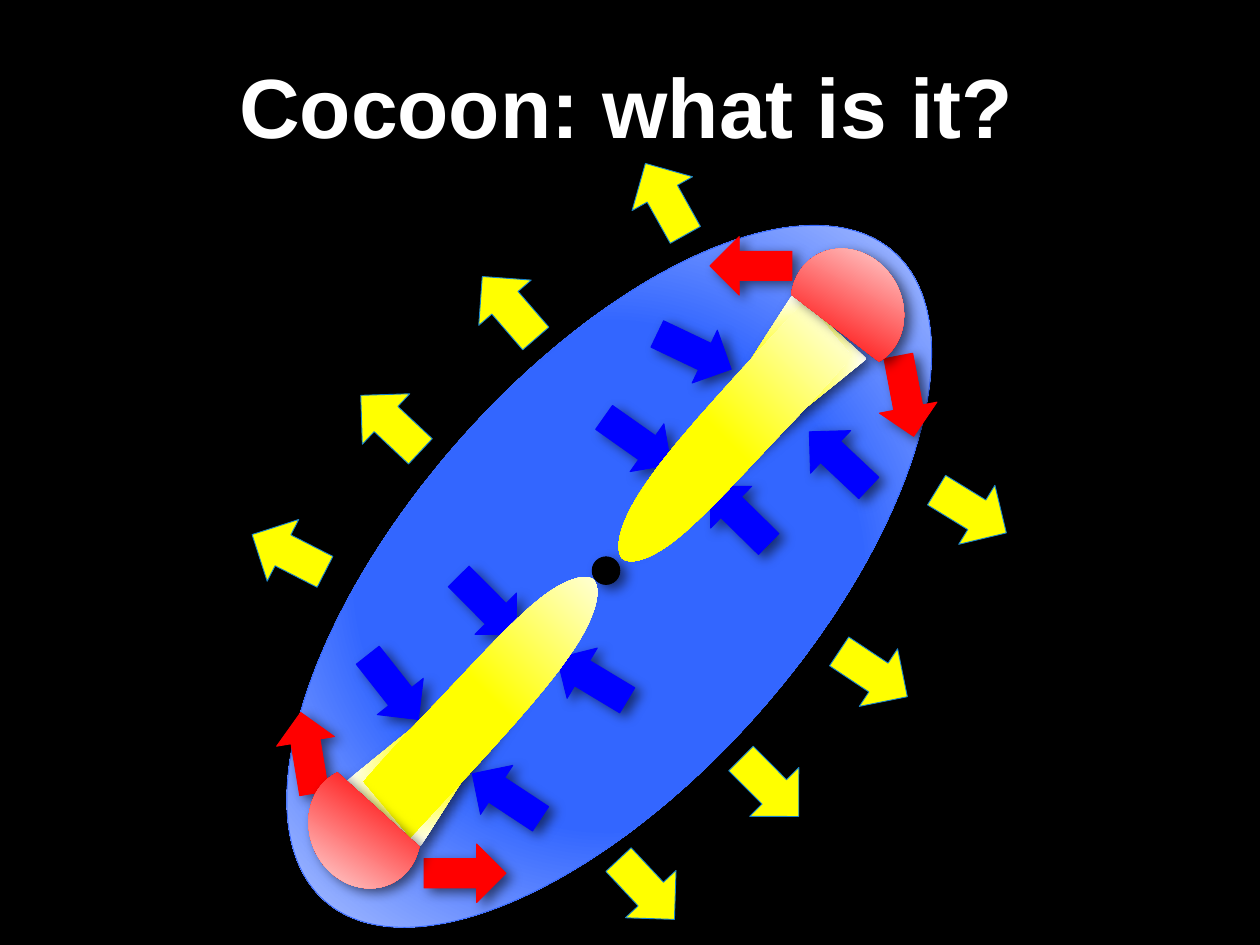
from lxml import etree
from pptx import Presentation
from pptx.dml.color import RGBColor
from pptx.enum import shapes, text
from pptx.oxml.ns import nsdecls
from pptx.util import Pt

NS = nsdecls("a")
KIND = shapes.MSO_SHAPE


def hue(code):
    return RGBColor.from_string(code)


def paint(shape, turn, fill, edge=None, shade=True):
    shape.rotation = turn
    shape.shadow.inherit = False
    props = shape._element.spPr
    if isinstance(fill, str):
        shape.fill.solid()
        shape.fill.fore_color.rgb = hue(fill)
    else:
        stops, way = fill
        marks = "".join(f'<a:gs pos="{pos * 1000}"><a:srgbClr val="{hue(code)}"/></a:gs>'
                        for pos, code in stops)
        shape.fill.background()
        props.replace(props.find("{*}noFill"), etree.fromstring(
            f'<a:gradFill {NS} rotWithShape="1"><a:gsLst>{marks}</a:gsLst>{way}</a:gradFill>'))
    if edge:
        shape.line.color.rgb = hue(edge)
        shape.line.width = Pt(0.5)
    else:
        shape.line.fill.background()
    if shade:
        props.find("{*}effectLst").append(etree.fromstring(
            f'<a:outerShdw {NS} blurRad="{Pt(7)}" dist="{Pt(4)}" dir="{35 * 60000}" '
            f'algn="ctr" rotWithShape="0"><a:srgbClr val="{hue("000000")}">'
            '<a:alpha val="55000"/></a:srgbClr></a:outerShdw>'))


deck = Presentation()
deck.slide_width, deck.slide_height = Pt(720), Pt(540)
slide = deck.slides.add_slide(deck.slide_layouts[5])
slide.background.fill.solid()
slide.background.fill.fore_color.rgb = hue("000000")
tree = slide.shapes

title = tree.title
title.left, title.top, title.width, title.height = Pt(70), Pt(14.4), Pt(576), Pt(90.7)
frame = title.text_frame
frame.text = "Cocoon: what is it?"
frame.vertical_anchor = text.MSO_ANCHOR.MIDDLE
frame.paragraphs[0].alignment = text.PP_ALIGN.CENTER
font = frame.paragraphs[0].runs[0].font
font.name, font.size, font.bold = "Arial", Pt(48), True
font.color.rgb = hue("FFFFFF")

mid = '<a:path path="{}"><a:fillToRect l="50000" t="50000" r="50000" b="50000"/></a:path>'
low = '<a:path path="circle"><a:fillToRect t="100000" r="100000"/></a:path>'
slant = f'<a:lin ang="{149 * 60000}" scaled="0"/>'
glow = ([(40, "3366FF"), (99, "FFFFFF"), (100, "FFFFFF")], mid.format("circle"))
flare = ([(48, "FFFF00"), (100, "FFFFFF")], mid.format("shape"))
beam = ([(50, "FFFF00"), (100, "FFFFFF")], low)
heat = ([(21, "FF0000"), (100, "FFFFFF")], slant)

cocoon = (KIND.OVAL, 101.5, 213.8, 493.2, 231.1, 131.2, glow, "3366FF")
core = (KIND.OVAL, 338.4, 318.2, 15.8, 15.8, 0, "000000", "000000")
cones = [(KIND.ISOSCELES_TRIANGLE, x, y, 56.2, 172.1, turn, flare, None)
         for x, y, turn in [(388.8, 164.2, 221.9), (248.4, 314.6, 41.7)]]
caps = [(KIND.CHORD, x, y, 62.6, 70.6, turn, heat, None)
        for x, y, turn in [(177.1, 437.8, 333.9), (452.9, 141.1, 149.2)]]

red = [(517.7, 226.4, 79.2), (175.7, 430.2, 260.5), (429.1, 151.9, 180), (265.7, 499, 0)]
blue = [(289.4, 455, 213.4), (278.6, 346, 45.2), (224.6, 392.8, 51.8), (396.7, 200.9, 25.5),
        (338.4, 388.1, 211), (479.5, 262.8, 223.3), (364.3, 252, 35.2), (422.6, 294.5, 224.5)]
gold = [(290.9, 175.7, 229.2), (380.2, 113.8, 240.8), (223.2, 241.9, 223.2),
        (164.9, 316.1, 207.1), (555.1, 292.3, 31.5), (499, 385.2, 33.6),
        (439.9, 450, 45.1), (369.4, 508.3, 46.9)]
wide = 46.8
flows = []
for spots, tall, fill, edge in [(red, 33.5, "FF0000", "FF0000"), (blue, 33.5, "0000FF", "0000FF"),
                                (gold, 39.6, "FFFF00", "1884CD")]:
    flows.append([(KIND.RIGHT_ARROW, x - wide / 2, y - tall / 2, wide, tall, turn, fill, edge)
                  for x, y, turn in spots])

start = (-20, -90)
curves = [((-21, -38), (-22.5, 15), (-19, 44.5)), ((-16, 74), (-8, 86.5), (-2, 89)),
          ((4, 92), (12, 81.5), (15.5, 62)), ((19.5, 41), (19.5, -6), (20.5, -30)),
          ((21.5, -54.5), (21, -84), (21, -84))]
rim = [start]
for a, b, c in curves:
    o = rim[-1]
    for step in range(1, 13):
        t = step / 12
        s = 1 - t
        rim.append(tuple(s**3 * o[i] + 3 * s * s * t * a[i] + 3 * s * t * t * b[i] + t**3 * c[i]
                         for i in (0, 1)))

for kind, x, y, w, h, turn, fill, edge in [cocoon, core, *cones, *flows[0], *flows[1]]:
    paint(tree.add_shape(kind, Pt(x), Pt(y), Pt(w), Pt(h)), turn, fill, edge)

for x, y, turn in [(415.4, 252.4, 41.7), (279.4, 398.5, 221.8)]:
    dots = [(Pt(x + dx), Pt(y + dy)) for dx, dy in rim]
    pen = tree.build_freeform(*dots[0])
    pen.add_line_segments(dots[1:], close=True)
    paint(pen.convert_to_shape(), turn, beam, shade=False)

for kind, x, y, w, h, turn, fill, edge in [*caps, *flows[2]]:
    paint(tree.add_shape(kind, Pt(x), Pt(y), Pt(w), Pt(h)), turn, fill, edge)

deck.save("out.pptx")
